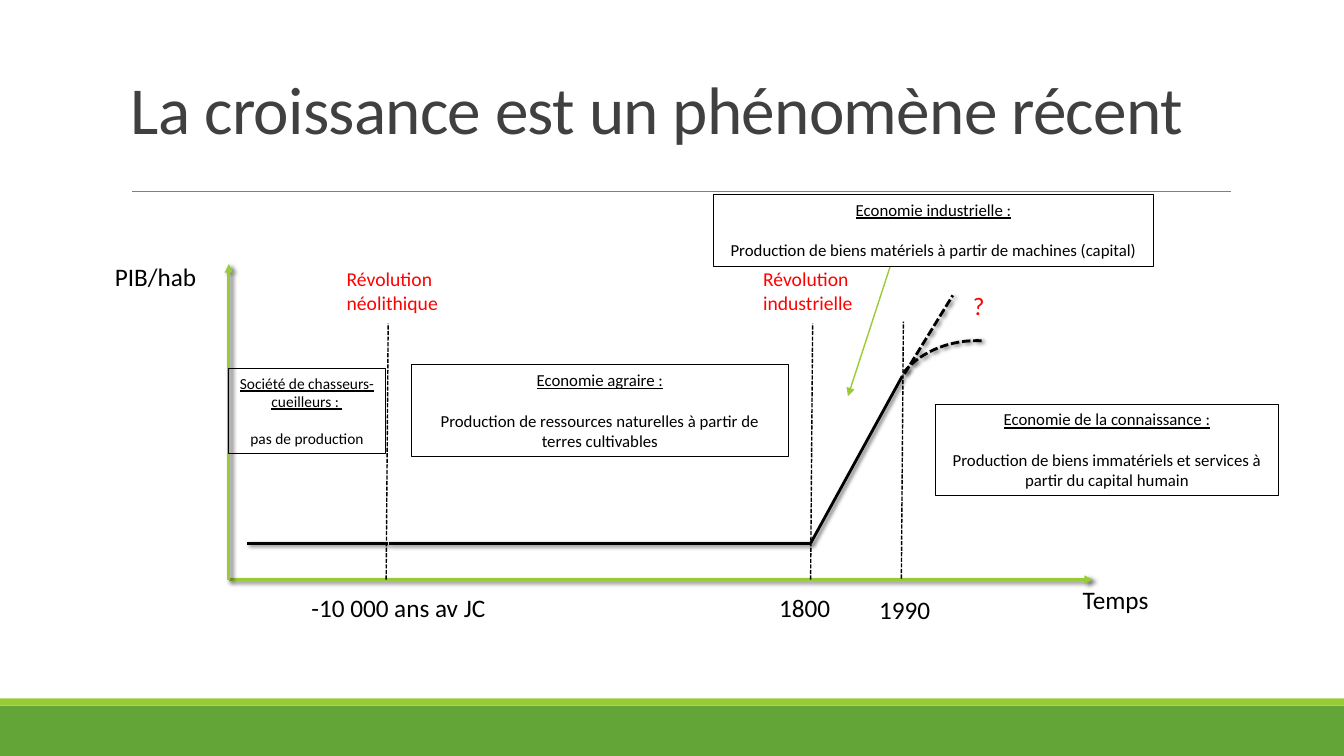
from pptx import Presentation
from pptx.dml.color import RGBColor
from pptx.enum.dml import MSO_LINE
from pptx.enum.shapes import MSO_CONNECTOR, MSO_SHAPE
from pptx.enum.text import MSO_ANCHOR, PP_ALIGN
from pptx.oxml.ns import qn
from pptx.util import Inches, Pt
from lxml import etree

STRAIGHT = MSO_CONNECTOR.STRAIGHT
RECT, ARC = MSO_SHAPE.RECTANGLE, MSO_SHAPE.ARC
DASH = MSO_LINE.SQUARE_DOT
LEFT, CENTER = PP_ALIGN.LEFT, PP_ALIGN.CENTER
TOP, BOTTOM = MSO_ANCHOR.TOP, MSO_ANCHOR.BOTTOM
FONT = "Calibri"
COLORS = {"green": "63A537", "lime": "99CB38", "grey": "808080",
          "title": "404040", "black": "000000", "red": "FF0000"}
RGB = {name: RGBColor.from_string(value) for name, value in COLORS.items()}

prs = Presentation()
prs.slide_width, prs.slide_height = Inches(13.33), Inches(7.5)
s = prs.slides.add_slide(prs.slide_layouts[6])


def write(sp, text, size=18, color="black", align=LEFT, anchor=TOP,
          heading=False, line_spacing=None, tracking=None):
    """Fill a shape with text; a heading underlines the first paragraph."""
    tf = sp.text_frame
    tf.word_wrap = True
    tf.vertical_anchor = anchor
    for i, line in enumerate(text.split("\n")):
        p = tf.paragraphs[0] if i == 0 else tf.add_paragraph()
        p.alignment = align
        if line_spacing:
            p.line_spacing = line_spacing
        if i:
            p.space_before = Pt(round(size * 1.22, 1))
        r = p.add_run()
        r.text = line
        r.font.name, r.font.size = FONT, Pt(size)
        r.font.color.rgb = RGB[color]
        r.font.underline = heading and i == 0
        if tracking:
            r.font._element.set("spc", str(tracking))


def stroke(sp, color="black", width=1, dash=None, arrow=False, shadow=False):
    """Style an outline, with an optional arrowhead and soft shadow."""
    sp.line.color.rgb = RGB[color]
    sp.line.width = Pt(width)
    if dash:
        sp.line.dash_style = dash
    props = sp._element.spPr
    if arrow:
        etree.SubElement(props.find(qn("a:ln")), qn("a:tailEnd"), type="triangle")
    effects = etree.SubElement(props, qn("a:effectLst"))
    if shadow:
        outer = etree.SubElement(effects, qn("a:outerShdw"), blurRad=str(Pt(3)),
                                 dist=str(Pt(2)), dir="2700000", rotWithShape="0")
        black = etree.SubElement(outer, qn("a:srgbClr"), val=COLORS["black"])
        etree.SubElement(black, qn("a:alpha"), val="60000")


# Footer bands
for top, height, color in [(7, 0.5, "green"), (6.93, 0.07, "lime")]:
    sp = s.shapes.add_shape(RECT, 0, Inches(top), prs.slide_width, Inches(height))
    sp.shadow.inherit = False
    sp.fill.solid()
    sp.fill.fore_color.rgb = RGB[color]
    sp.line.fill.background()

# Title
sp = s.shapes.add_textbox(Inches(1.2), Inches(0.31), Inches(11), Inches(1.21))
write(sp, "La croissance est un phénomène récent", size=48, color="title",
      anchor=BOTTOM, line_spacing=0.85, tracking=-50)

# Title rule, axes, period limits, growth curve and pointer
axis = dict(color="lime", width=2, arrow=True, shadow=True)
limit = dict(dash=DASH)
curve = dict(width=2, shadow=True)
lines = [
    (1.31, 1.9, 12.21, 1.9, dict(color="grey", width=0.5)),
    (2.27, 5.75, 10.84, 5.75, axis),
    (2.27, 5.75, 2.27, 2.62, axis),
    (3.83, 5.75, 3.85, 3.21, limit),
    (8.04, 5.75, 8.06, 3.21, limit),
    (8.94, 5.74, 8.96, 3.19, limit),
    (2.45, 5.39, 3.85, 5.39, curve),
    (3.86, 5.39, 8.04, 5.39, curve),
    (8.04, 5.39, 8.95, 3.73, curve),
    (8.97, 3.71, 9.45, 2.93, dict(curve, dash=DASH)),
    (8.83, 2.64, 8.41, 3.93, dict(color="lime", arrow=True)),
]
for x1, y1, x2, y2, style in lines:
    line = s.shapes.add_connector(STRAIGHT, Inches(x1), Inches(y1),
                                  Inches(x2), Inches(y2))
    stroke(line, **style)

# Slowing branch of the curve
arc = s.shapes.add_shape(ARC, Inches(8.83), Inches(3.38), Inches(1.72), Inches(1.36))
arc.adjustments[0], arc.adjustments[1] = 123.9, 164.89
arc.fill.background()
stroke(arc, dash=DASH, **curve)

# Axis, date and revolution labels
labels = [
    (10.64, 5.75, 1.42, 0.4, "Temps", {}),
    (1.04, 2.54, 1.05, 0.4, "PIB/hab", {}),
    (2.99, 5.83, 2.07, 0.4, "-10 000 ans av JC", {}),
    (7.63, 5.83, 1.72, 0.4, "1800", {}),
    (8.62, 5.85, 1.17, 0.4, "1990", {}),
    (3.34, 2.6, 1.17, 0.57, "Révolution néolithique", dict(size=14, color="red")),
    (7.47, 2.6, 1.17, 0.57, "Révolution industrielle", dict(size=14, color="red")),
    (9.55, 2.83, 0.86, 0.4, "?", dict(color="red")),
]
for x, y, w, h, text, style in labels:
    sp = s.shapes.add_textbox(Inches(x), Inches(y), Inches(w), Inches(h))
    write(sp, text, **style)

# Economy boxes
boxes = [
    (2.27, 3.66, 1.55, 0.84, 11,
     "Société de chasseurs-cueilleurs : \npas de production"),
    (4.08, 3.62, 3.74, 0.91, 12,
     "Economie agraire :\n"
     "Production de ressources naturelles à partir de terres cultivables"),
    (7.08, 1.93, 4.36, 0.71, 12,
     "Economie industrielle :\n"
     "Production de biens matériels à partir de machines (capital)"),
    (9.28, 4.01, 3.4, 0.91, 12,
     "Economie de la connaissance :\n"
     "Production de biens immatériels et services à partir du capital humain"),
]
for x, y, w, h, size, text in boxes:
    sp = s.shapes.add_shape(RECT, Inches(x), Inches(y), Inches(w), Inches(h))
    sp.fill.background()
    stroke(sp, width=0.75)
    write(sp, text, size=size, align=CENTER, heading=True)

prs.save("out.pptx")
